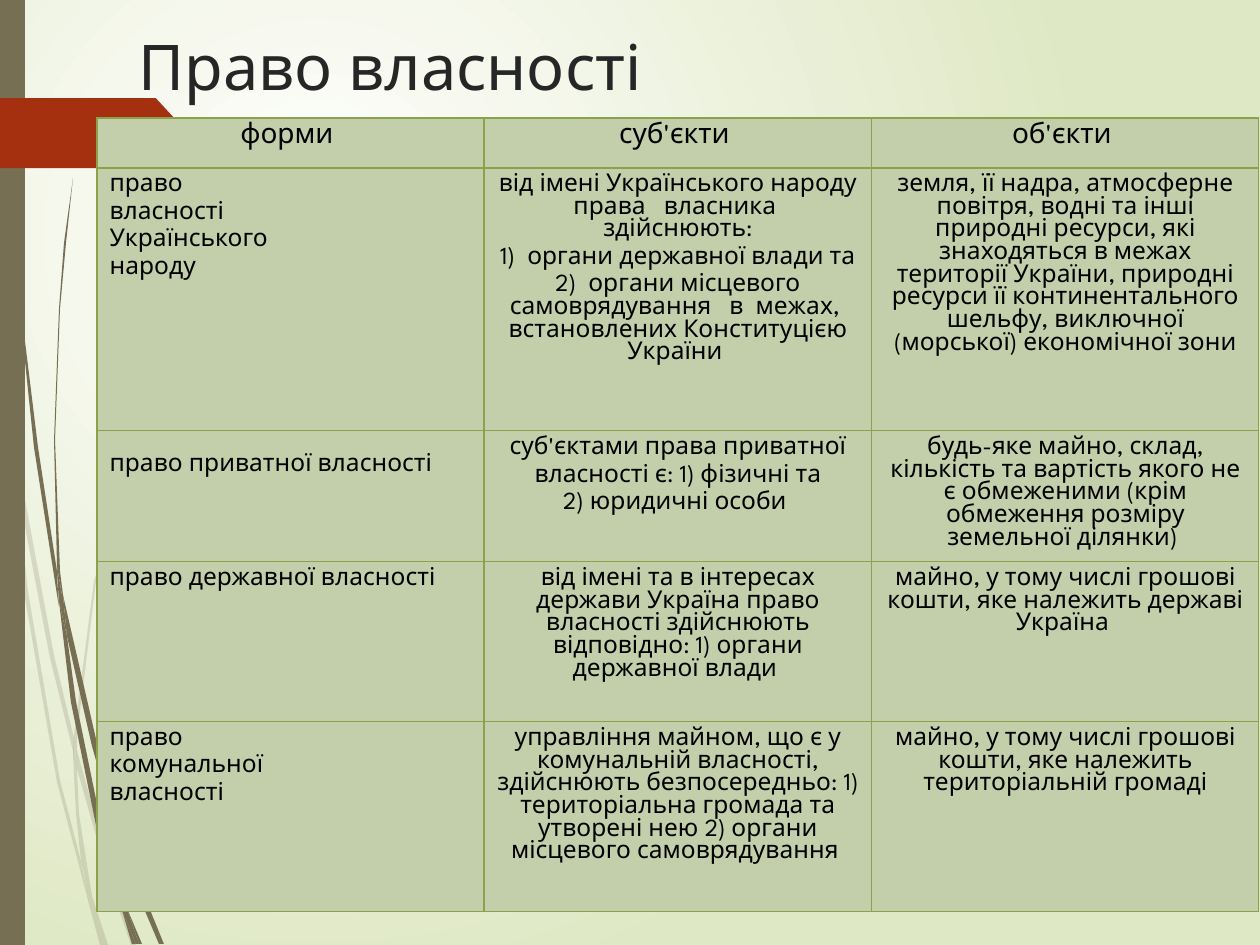
from lxml.etree import SubElement as Sub
from pptx import Presentation
from pptx.dml.color import RGBColor as RGB
from pptx.enum.shapes import MSO_SHAPE as SHAPE
from pptx.enum.text import MSO_ANCHOR as ANCHOR, PP_ALIGN as ALIGN
from pptx.oxml.ns import qn
from pptx.util import Pt

PX = 914400 / 126
FONT = "League Spartan"
HUES = {"bark": "766F54", "flag": "A53010", "cell": "C3CEAA", "edge": "8BA249",
        "title": "262626", "text": "000000", "core": "FFFFFF", "rim": "DFE8C4"}
COLS = [387, 388, 387]
ROWS = [50, 263, 131, 160, 190]
HEAD = ["форми ", "суб'єкти ", "об'єкти "]
BODY = [
    ["право\nвласності\nУкраїнського\nнароду",
     "від імені Українського народу права   власника  здійснюють:\n"
     "1)  органи державної влади та\n"
     "2)  органи місцевого самоврядування   в  межах,  "
     "встановлених Конституцією України ",
     "земля, її надра, атмосферне повітря, водні та інші природні ресурси, "
     "які знаходяться в межах території України, природні ресурси її "
     "континентального шельфу, виключної (морської) економічної зони"],
    ["право приватної власності",
     "суб'єктами права приватної\nвласності є: 1) фізичні та\n2) юридичні особи ",
     "будь-яке майно, склад, кількість та вартість якого не є обмеженими "
     "(крім обмеження розміру земельної ділянки) "],
    ["право державної власності",
     "від імені та в інтересах держави Україна право власності здійснюють "
     "відповідно: 1) органи державної влади ",
     "майно, у тому числі грошові кошти, яке належить державі Україна "],
    ["право\nкомунальної\nвласності",
     "управління майном, що є у комунальній власності, здійснюють безпосередньо: "
     "1) територіальна громада та утворені нею 2) органи місцевого самоврядування ",
     "майно, у тому числі грошові кошти, яке належить територіальній громаді"],
]
PALE = [
    [(10, 441), (8, 406), (0, 355), (0, 377), (9, 433)],
    [(50, 658), (74, 755), (74, 738), (54, 655), (13, 435), (15, 474)],
    [(81, 765), (77, 751), (77, 769), (107, 874), (131, 945), (136, 945), (111, 872)],
    [(105, 945), (108, 945), (92, 896)],
    [(81, 861), (60, 780), (28, 591), (15, 474), (10, 441), (24, 592), (57, 782),
     (81, 873), (88, 900), (87, 891)],
    [(73, 755), (76, 814), (81, 861), (84, 872), (92, 896), (91, 890), (79, 814),
     (77, 769), (77, 766)],
    [(77, 736), (96, 582), (140, 440), (200, 309), (236, 249), (253, 221), (273, 194),
     (273, 193), (253, 221), (234, 248), (199, 307), (139, 438), (94, 581), (74, 736),
     (74, 738), (77, 751)],
    [(88, 900), (100, 945), (103, 945)],
    [(77, 766), (77, 769), (77, 751), (74, 738), (73, 755)],
    [(84, 872), (82, 861), (87, 891), (88, 900), (103, 945), (105, 945), (92, 896)],
]
DARK = [
    [(6, 139), (18, 294), (34, 447), (58, 601), (59, 606), (57, 576), (57, 571),
     (38, 447), (19, 292), (8, 137), (5, 60), (4, 0), (3, 0), (4, 60)],
    [(92, 746), (111, 813), (111, 798), (111, 795), (97, 743), (63, 595), (67, 636)],
    [(118, 818), (115, 808), (115, 827), (137, 892), (159, 944), (164, 944), (142, 890)],
    [(115, 871), (102, 828), (76, 701), (67, 636), (59, 601), (71, 702), (97, 830),
     (116, 892), (122, 910), (121, 903)],
    [(63, 595), (60, 571), (55, 440), (60, 309), (66, 243), (73, 178), (64, 243),
     (59, 309), (54, 440), (57, 566), (62, 595)],
    [(139, 944), (142, 944), (126, 906)],
    [(59, 601), (67, 636), (63, 595), (62, 595), (57, 566), (57, 571)],
    [(115, 798), (130, 696), (165, 600), (213, 512), (241, 471), (256, 452), (272, 433),
     (271, 433), (256, 451), (241, 470), (212, 510), (163, 597), (127, 694), (111, 795),
     (115, 808)],
    [(122, 910), (132, 944), (136, 944)],
    [(111, 813), (115, 871), (121, 890), (126, 906), (126, 902), (115, 827), (113, 820)],
    [(121, 890), (115, 871), (121, 903), (122, 910), (136, 944), (139, 944), (126, 906)],
]


def emu(*px):
    """Turn px lengths into EMU."""
    return [round(n * PX) for n in px]


def hue(name):
    """Look up a colour by name."""
    return RGB.from_string(HUES[name])


def glow(slide):
    """Fill the background with a radial gradient."""
    fill = slide.background.fill
    fill.gradient()
    for stop, name, pos in zip(fill.gradient_stops, ("core", "rim"), (0, 1)):
        stop.color.rgb = hue(name)
        stop.position = pos
    grad = slide._element.find(".//" + qn("a:gradFill"))
    grad.remove(grad.find(qn("a:lin")))
    path = Sub(grad, qn("a:path"), path="circle")
    Sub(path, qn("a:fillToRect"), l="50000", t="50000", r="100000", b="100000")


def paint(shape, name, alpha=100):
    """Give a shape a plain fill, with no line or shadow."""
    shape.shadow.inherit = False
    shape.line.fill.background()
    shape.fill.solid()
    shape.fill.fore_color.rgb = hue(name)
    if alpha < 100:
        tint = shape._element.spPr.find(".//" + qn("a:srgbClr"))
        Sub(tint, qn("a:alpha"), val=str(alpha * 1000))


def wisp(slide, dots, alpha):
    """Draw one blade of grass through its outline points."""
    pen = slide.shapes.build_freeform(*dots[0], scale=PX)
    pen.add_line_segments(dots[1:], close=True)
    paint(pen.convert_to_shape(), "bark", alpha)


def block(slide, kind, box, name):
    """Draw a preset shape."""
    shape = slide.shapes.add_shape(kind, *emu(*box))
    paint(shape, name)
    return shape


def style(para, size, name="text"):
    """Set the font of a paragraph."""
    para.font.name = FONT
    para.font.size = Pt(size)
    para.font.color.rgb = hue(name)


def head(slide, text):
    """Place and format the title."""
    title = slide.shapes.title
    title.left, title.top, title.width, title.height = emu(126, 26, 1134, 79)
    frame = title.text_frame
    frame.text = text
    frame.vertical_anchor = ANCHOR.MIDDLE
    style(frame.paragraphs[0], 36, "title")
    frame.paragraphs[0].alignment = ALIGN.LEFT


def edge(cell):
    """Outline a table cell."""
    props = cell._tc.get_or_add_tcPr()
    for i, side in enumerate(("lnL", "lnR", "lnT", "lnB")):
        line = props.makeelement(qn("a:" + side), {"w": str(Pt(0.75))})
        props.insert(i, line)
        Sub(Sub(line, qn("a:solidFill")), qn("a:srgbClr"), val=HUES["edge"])


def write(cell, text, size, align):
    """Fill, outline and write a table cell."""
    cell.fill.solid()
    cell.fill.fore_color.rgb = hue("cell")
    edge(cell)
    cell.text = text
    for para in cell.text_frame.paragraphs:
        style(para, size)
        para.alignment = align
        para.space_before = Pt(size / 5)


def grid(slide):
    """Build the table of ownership forms."""
    box = emu(97, 118, sum(COLS), sum(ROWS))
    table = slide.shapes.add_table(len(ROWS), len(COLS), *box).table
    for col, wide in zip(table.columns, emu(*COLS)):
        col.width = wide
    for row, high in zip(table.rows, emu(*ROWS)):
        row.height = high
    for r, texts in enumerate([HEAD] + BODY):
        for c, text in enumerate(texts):
            align = ALIGN.LEFT if r and not c else ALIGN.CENTER
            write(table.cell(r, c), text, 14 if r else 16, align)
    tail = table.cell(2, 0).text_frame.paragraphs[0].add_run()
    tail.text = " "
    tail.font.size = Pt(28)


def main():
    """Build the slide and save it."""
    deck = Presentation()
    deck.slide_width, deck.slide_height = emu(1260, 945)
    slide = deck.slides.add_slide(deck.slide_layouts[5])
    glow(slide)
    for alpha, blades in ((20, PALE), (100, DARK)):
        for dots in blades:
            wisp(slide, dots, alpha)
    block(slide, SHAPE.RECTANGLE, (0, 0, 25, 945), "bark")
    flag = block(slide, SHAPE.PENTAGON, (0, 98, 188, 70), "flag")
    flag.adjustments[0] = 0.46
    head(slide, "Право власності")
    grid(slide)
    deck.save("out.pptx")


if __name__ == "__main__":
    main()
